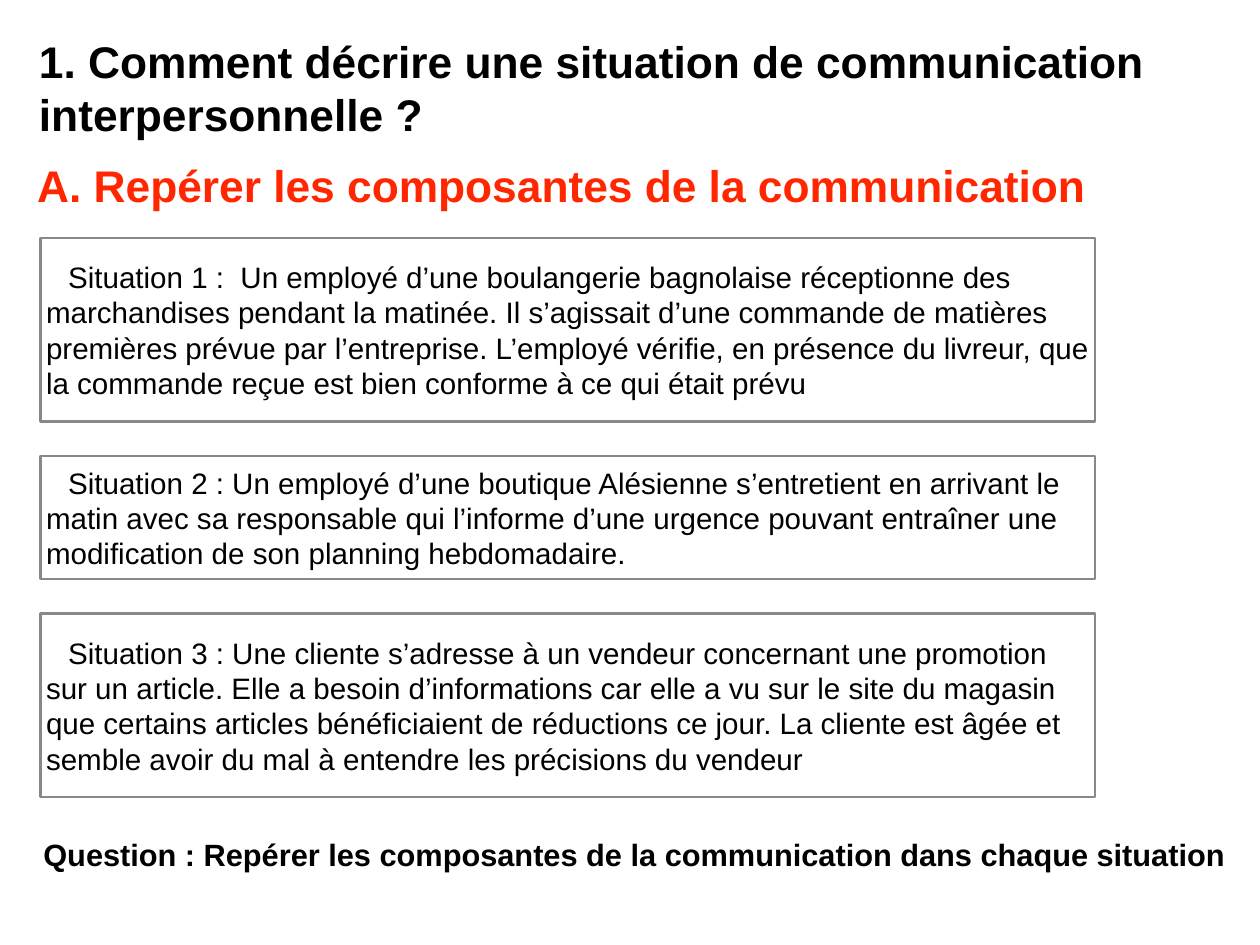
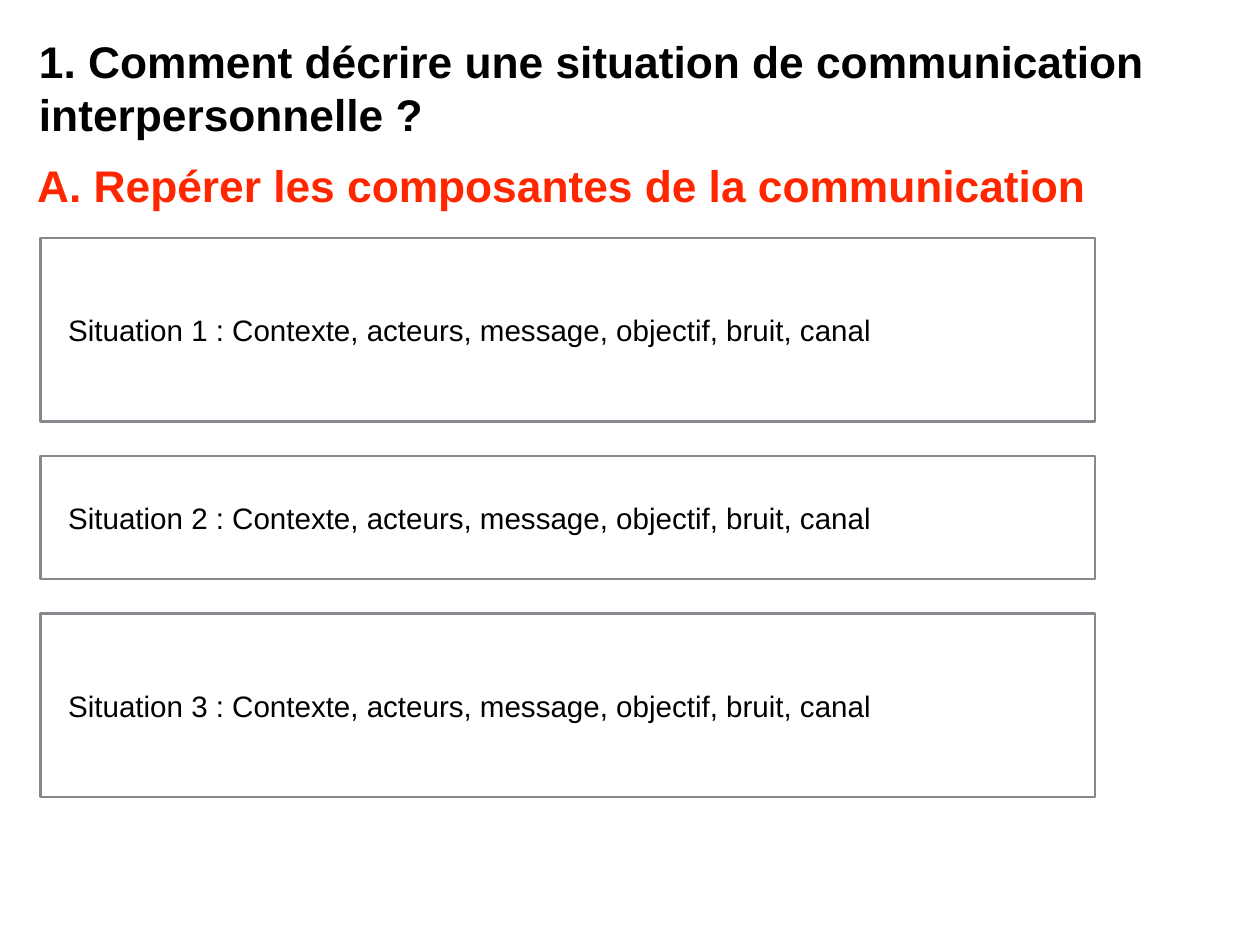
from pptx import Presentation
from pptx.dml.color import RGBColor
from pptx.enum.shapes import MSO_SHAPE
from pptx.enum.text import MSO_ANCHOR, MSO_AUTO_SIZE, PP_ALIGN
from pptx.util import Inches, Pt

BLACK = RGBColor(0x00, 0x00, 0x00)
RED = RGBColor(0xFF, 0x26, 0x00)
GREY = RGBColor(0x85, 0x88, 0x8D)

RECTANGLE = MSO_SHAPE.RECTANGLE
MIDDLE = MSO_ANCHOR.MIDDLE
LEFT = PP_ALIGN.LEFT
NO_FIT = MSO_AUTO_SIZE.NONE

FONT = "Arial"
TITLE_ONLY = 5
INSET = 0.06

# Stack of situation boxes
BOX_LEFT, BOX_TOP, BOX_WIDTH = 0.46, 2.69, 11.9
BOX_HEIGHTS = (2.07, 1.39, 2.07)
BOX_GAP = 0.39

TITLE = "1. Comment décrire une situation de communication interpersonnelle ?"
SUBTITLE = "A. Repérer les composantes de la communication"
QUESTION = "Question : Repérer les composantes de la communication dans chaque situation"
SITUATIONS = (
    "Situation 1 :  Un employé d’une boulangerie bagnolaise réceptionne des "
    "marchandises pendant la matinée. Il s’agissait d’une commande de matières "
    "premières prévue par l’entreprise. L’employé vérifie, en présence du livreur, "
    "que la commande reçue est bien conforme à ce qui était prévu",
    "Situation 2 : Un employé d’une boutique Alésienne s’entretient en arrivant le "
    "matin avec sa responsable qui l’informe d’une urgence pouvant entraîner une "
    "modification de son planning hebdomadaire.",
    "Situation 3 : Une cliente s’adresse à un vendeur concernant une promotion sur "
    "un article. Elle a besoin d’informations car elle a vu sur le site du magasin "
    "que certains articles bénéficiaient de réductions ce jour. La cliente est âgée "
    "et semble avoir du mal à entendre les précisions du vendeur",
)
COMPONENTS = [
    f"Situation {number} : Contexte, acteurs, message, objectif, bruit, canal"
    for number in range(1, len(BOX_HEIGHTS) + 1)
]


class Lesson:
    """Holds the deck, its style and the current page."""

    def __init__(self):
        self.deck = Presentation()
        self.deck.slide_width = Inches(14.22)
        self.deck.slide_height = Inches(10.67)
        self.page = None

    def new_page(self):
        layout = self.deck.slide_layouts[TITLE_ONLY]
        self.page = self.deck.slides.add_slide(layout)
        self.title()
        self.text(SUBTITLE, 0.36, 1.73, 12.1, 0.71, 36, RED)

    def set_text(self, shape, text, size, color=BLACK, bold=False):
        frame = shape.text_frame
        frame.word_wrap = True
        frame.auto_size = NO_FIT
        frame.vertical_anchor = MIDDLE
        frame.margin_left = frame.margin_right = Inches(INSET)
        frame.margin_top = frame.margin_bottom = Inches(INSET)
        para = frame.paragraphs[0]
        para.text = text
        para.alignment = LEFT
        para.font.name = FONT
        para.font.size = Pt(size)
        para.font.bold = bold
        para.font.color.rgb = color
        return para

    def title(self):
        title = self.page.shapes.title
        title.left, title.top = Inches(0.38), Inches(0.33)
        title.width, title.height = Inches(12.74), Inches(1.31)
        self.set_text(title, TITLE, 36, bold=True)

    def text(self, text, left, top, width, height, size, color=BLACK):
        box = self.page.shapes.add_textbox(
            Inches(left), Inches(top), Inches(width), Inches(height))
        self.set_text(box, text, size, color, bold=True)

    def situation(self, text, top, height):
        box = self.page.shapes.add_shape(
            RECTANGLE, Inches(BOX_LEFT), Inches(top), Inches(BOX_WIDTH), Inches(height))
        box.shadow.inherit = False
        box.fill.background()
        box.line.color.rgb = GREY
        box.line.width = Pt(2)
        para = self.set_text(box, text, 24)
        # First-line indent
        properties = para._p.get_or_add_pPr()
        properties.set("marL", "0")
        properties.set("indent", str(Inches(0.25)))

    def situations(self, texts):
        top = BOX_TOP
        for text, height in zip(texts, BOX_HEIGHTS):
            self.situation(text, top, height)
            top += height + BOX_GAP


def main():
    lesson = Lesson()

    # Situations and question
    lesson.new_page()
    lesson.situations(SITUATIONS)
    lesson.text(QUESTION, 0.43, 9.38, 13.57, 0.53, 25)

    # Components to find
    lesson.new_page()
    lesson.situations(COMPONENTS)

    lesson.deck.save("out.pptx")


if __name__ == "__main__":
    main()
